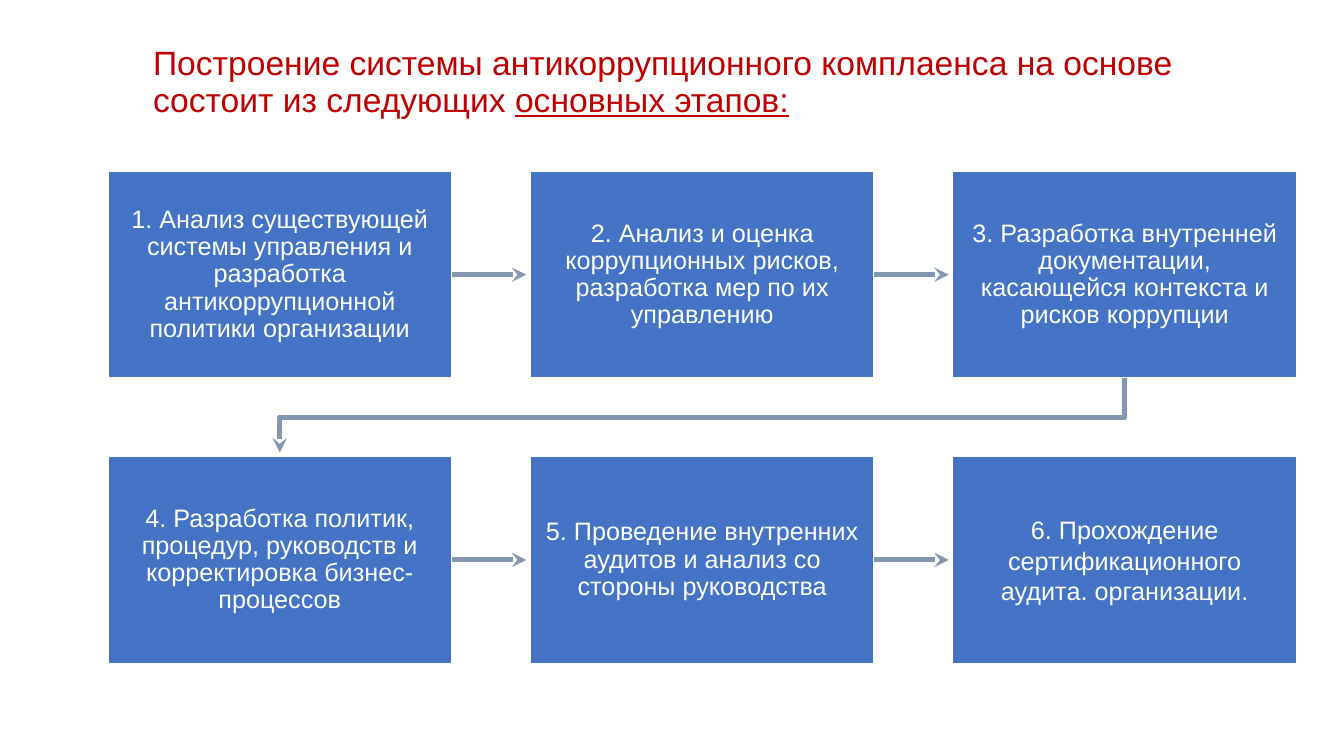
import pptx
import pptx.util
import pptx.dml.color
import pptx.enum.shapes
import pptx.enum.text
import pptx.oxml
import pptx.oxml.ns

RED = pptx.dml.color.RGBColor(0xC0, 0x00, 0x00)
BLUE = pptx.dml.color.RGBColor(0x44, 0x72, 0xC4)
GREY = pptx.dml.color.RGBColor(0x84, 0x97, 0xB0)
WHITE = pptx.dml.color.RGBColor(0xFF, 0xFF, 0xFF)

STAGES = [
    "1. Анализ существующей системы управления и разработка антикоррупционной политики организации",
    "2. Анализ и оценка коррупционных рисков, разработка мер по их управлению",
    "3. Разработка внутренней документации, касающейся контекста и рисков коррупции",
    "4. Разработка политик, процедур, руководств и корректировка бизнес-процессов",
    "5. Проведение внутренних аудитов и анализ со стороны руководства",
    "6. Прохождение сертификационного аудита. организации.",
]


class StageSlide:
    """One slide with a grid of stage boxes; holds fonts and grid measures."""
    FONT = "Arial"
    COLUMNS = 3
    LEFT, TOP = pptx.util.Inches(1.07), pptx.util.Inches(1.7)
    BOX_W, BOX_H = pptx.util.Inches(3.41), pptx.util.Inches(2.05)
    GAP = pptx.util.Inches(0.78)
    TIP_GAP = pptx.util.Inches(0.04)

    def __init__(self, prs):
        self.s = prs.slides.add_slide(prs.slide_layouts[6])

    def cell(self, index):
        """Left and top of a numbered grid cell."""
        row, col = divmod(index, self.COLUMNS)
        return (self.LEFT + col * (self.BOX_W + self.GAP),
                self.TOP + row * (self.BOX_H + self.GAP))

    def set_text(self, tf, runs, size, color, align, spacing, inset_x, inset_y):
        tf.word_wrap = True
        tf.vertical_anchor = pptx.enum.text.MSO_ANCHOR.MIDDLE
        tf.margin_left = tf.margin_right = pptx.util.Inches(inset_x)
        tf.margin_top = tf.margin_bottom = pptx.util.Inches(inset_y)
        p = tf.paragraphs[0]
        p.alignment = align
        p.line_spacing = spacing
        for text, underline in runs:
            r = p.add_run()
            r.text = text
            r.font.name = self.FONT
            r.font.size = pptx.util.Pt(size)
            r.font.color.rgb = color
            if underline:
                r.font.underline = True

    def title(self, runs):
        tb = self.s.shapes.add_textbox(
            pptx.util.Inches(1.42), pptx.util.Inches(0.2),
            pptx.util.Inches(10.88), pptx.util.Inches(1.25))
        self.set_text(tb.text_frame, runs, 24, RED,
                      pptx.enum.text.PP_ALIGN.LEFT, 0.9, 0.1, 0.05)

    def box(self, index, text, spacing):
        sp = self.s.shapes.add_shape(
            pptx.enum.shapes.MSO_SHAPE.RECTANGLE,
            *self.cell(index), self.BOX_W, self.BOX_H)
        sp.shadow.inherit = False
        sp.fill.solid()
        sp.fill.fore_color.rgb = BLUE
        sp.line.color.rgb = WHITE
        sp.line.width = pptx.util.Pt(1)
        self.set_text(sp.text_frame, [(text, False)], 18, WHITE,
                      pptx.enum.text.PP_ALIGN.CENTER, spacing, 0.14, 0.14)
        return sp

    def arrow_line(self, line):
        line.color.rgb = GREY
        line.width = pptx.util.Pt(3.5)
        tail = pptx.oxml.parse_xml(
            "<a:tailEnd %s type='stealth'/>" % pptx.oxml.ns.nsdecls("a"))
        line._get_or_add_ln().append(tail)

    def arrow(self, start, end):
        """Straight arrow between neighbours in a row."""
        y = start.top + start.height // 2
        c = self.s.shapes.add_connector(
            pptx.enum.shapes.MSO_CONNECTOR.STRAIGHT,
            start.left + start.width, y, end.left - self.TIP_GAP, y)
        c.begin_connect(start, 3)
        self.arrow_line(c.line)
        c._element.spPr.append(pptx.oxml.parse_xml(
            "<a:effectLst %s/>" % pptx.oxml.ns.nsdecls("a")))

    def row_break(self, start, end):
        """Bent arrow from the end of one row to the start of the next."""
        x1, x2 = (b.left + b.width // 2 for b in (start, end))
        bottom = start.top + start.height
        middle = (bottom + end.top) // 2
        fb = self.s.shapes.build_freeform(x1, bottom)
        fb.add_line_segments(
            [(x1, middle), (x2, middle), (x2, end.top - self.TIP_GAP)],
            close=False)
        sp = fb.convert_to_shape()
        sp.shadow.inherit = False
        sp.fill.background()
        self.arrow_line(sp.line)


def main():
    prs = pptx.Presentation()
    prs.slide_width = pptx.util.Inches(13.33)
    prs.slide_height = pptx.util.Inches(7.5)
    slide = StageSlide(prs)
    slide.title([
        ("Построение системы антикоррупционного комплаенса на основе состоит из следующих ", False),
        ("основных этапов:", True),
    ])
    last = len(STAGES) - 1
    boxes = [slide.box(i, text, 1.0 if i == last else 0.9)
             for i, text in enumerate(STAGES)]
    for i, (start, end) in enumerate(zip(boxes, boxes[1:]), 1):
        if i % slide.COLUMNS:
            slide.arrow(start, end)
        else:
            slide.row_break(start, end)
    prs.save("out.pptx")


if __name__ == "__main__":
    main()
